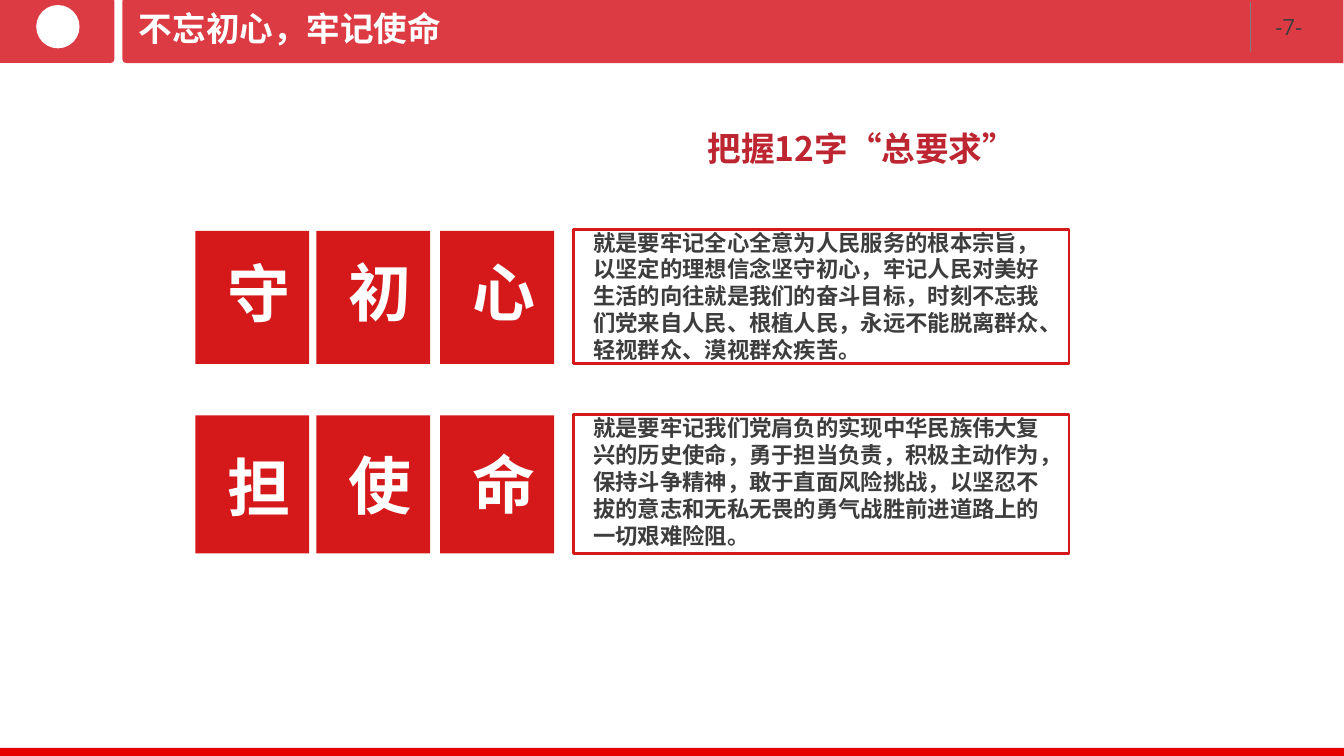
from lxml import etree
from pptx import Presentation, util as u
from pptx.dml.color import RGBColor
from pptx.enum import shapes, text
from pptx.oxml.ns import qn

PX = 9144
FONT = "Noto Sans CJK SC"
HUE = {"bar": "DD3B44", "foot": "E60000", "tile": "D51819", "head": "BD2531",
       "ink": "3D3D3D", "rule": "7F7F7F", "white": "FFFFFF"}
RECT = shapes.MSO_SHAPE.RECTANGLE

deck = Presentation()
deck.slide_width, deck.slide_height = 1334 * PX, 750 * PX
slide = deck.slides.add_slide(deck.slide_layouts[6])
tree = slide.shapes


def block(kind, box, fill=None, line=None):
    shape = tree.add_shape(kind, *[n * PX for n in box])
    shape.shadow.inherit = False
    if fill:
        shape.fill.solid()
        shape.fill.fore_color.rgb = RGBColor.from_string(HUE[fill])
    else:
        shape.fill.background()
    if line:
        shape.line.color.rgb = RGBColor.from_string(HUE[line])
        shape.line.width = u.Pt(2)
    else:
        shape.line.fill.background()
    return shape


def label(words, box, size, hue, align="LEFT", font=FONT, bold=True, wrap=True):
    area = tree.add_textbox(*[n * PX for n in box])
    frame = area.text_frame
    frame.word_wrap = wrap
    para = frame.paragraphs[0]
    para.alignment = getattr(text.PP_ALIGN, align)
    run = para.add_run()
    run.text = words
    run.font.size = u.Pt(size)
    run.font.bold = bold
    run.font.name = font
    run.font.color.rgb = RGBColor.from_string(HUE[hue])
    etree.SubElement(run._r.get_or_add_rPr(), qn("a:ea"), typeface=font)
    return frame


for left, width, turn in [(0, 114, 0), (122, 1212, 180)]:
    bar = block(shapes.MSO_SHAPE.ROUND_2_SAME_RECTANGLE,
                (left + (width - 65) // 2, -3 - (width - 65) // 2, 65, width), "bar")
    bar.rotation = 90 + turn
    bar.adjustments[0] = 0.06

label("-7-", (1256, 8, 64, 37), 16, "ink", font="Open Sans", bold=False, wrap=False)
rule = tree.add_connector(shapes.MSO_CONNECTOR.STRAIGHT, 1241 * PX, 2 * PX, 1241 * PX, 52 * PX)
rule.line.color.rgb = RGBColor.from_string(HUE["rule"])
rule.line.width = u.Pt(0.75)
etree.SubElement(rule._element.spPr, qn("a:effectLst"))
block(shapes.MSO_SHAPE.OVAL, (36, 5, 43, 43), "white")
block(RECT, (0, 742, 1334, 8), "foot")

title = label("不忘初心，牢记使命", (128, 0, 902, 55), 24, "white")
title.vertical_anchor = text.MSO_ANCHOR.MIDDLE

head = label("把握12字“总要求”", (692, 123, 327, 48), 24, "head", "CENTER")
head.margin_left = head.margin_right = 8 * PX
head.margin_top = head.margin_bottom = 4 * PX

rows = [
    ("守初心", 229, 132, (248, 247, 247), 222,
     "就是要牢记全心全意为人民服务的根本宗旨，以坚定的理想信念坚守初心，牢记人民对美好生活的向往就是我们的奋斗目标，时刻不忘我们党来自人民、根植人民，永远不能脱离群众、轻视群众、漠视群众疾苦。"),
    ("担使命", 412, 137, (440, 438, 437), 406,
     "就是要牢记我们党肩负的实现中华民族伟大复兴的历史使命，勇于担当负责，积极主动作为，保持斗争精神，敢于直面风险挑战，以坚忍不拔的意志和无私无畏的勇气战胜前进道路上的一切艰难险阻。"),
]
for motto, top, high, tops, start, body in rows:
    for char, left, rise in zip(motto, (194, 314, 437), tops):
        block(RECT, (left, top, 113, high), "tile")
        label(char, (left + 22, rise, 76, 86), 45, "white", "CENTER")
    block(RECT, (569, top - 1, 492, high + 1), line="tile")
    label(body, (579, start, 474, 145), 16, "ink")

deck.save("out.pptx")
